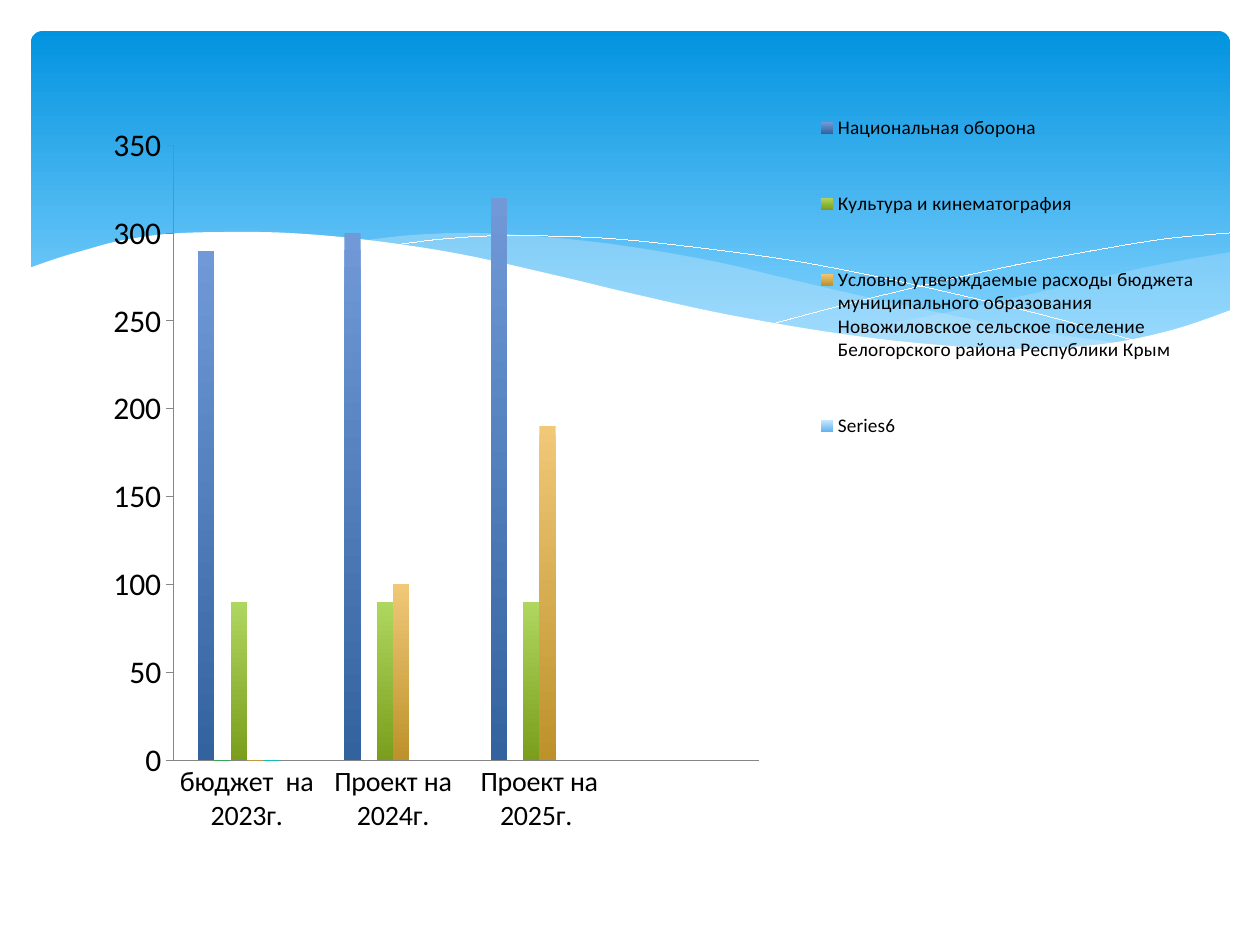
from lxml.etree import SubElement
from pptx import Presentation
from pptx.chart.data import CategoryChartData
from pptx.dml.color import RGBColor
from pptx.enum.chart import XL_CHART_TYPE, XL_LEGEND_POSITION, XL_TICK_MARK
from pptx.enum.shapes import MSO_SHAPE
from pptx.oxml import parse_xml
from pptx.oxml.ns import nsdecls, qn
from pptx.util import Pt

CATEGORIES = ["бюджет  на 2023г.", "Проект на 2024г.", "Проект на 2025г. ", ""]
# name, values, top colour, bottom colour, shown in legend
SERIES = [
    ("Национальная оборона", (290, 300, 320, None), "7199D8", "33639F", True),
    ("Series 2", (0, None, None, None), "7FDB94", "2FA04C", False),
    ("Культура и кинематография", (90, 90, 90, None), "AFD65F", "7A9E1C", True),
    ("Условно утверждаемые расходы бюджета муниципального образования "
     "Новожиловское сельское поселение Белогорского района Республики Крым",
     (0, 100, 190, None), "F0C878", "BD922B", True),
    ("Series 5", (0, None, None, None), "40E8E2", "05B5B0", False),
    ("Series6", (None, None, None, None), "C5E6FC", "5FB3F0", True),
]

THEME = {
    "font": "Calibri", "text": "000000", "axis": "868686",
    "sky": ("0293E0", "83D3FE"), "wave": "C6E7FC", "white": "FFFFFF",
    "value_size": 18, "category_size": 16, "legend_size": 11,
}

PX = 914400 / 126
SLIDE = (1260, 945)
BANNER = (31, 31, 1199, 340)
CHART = (75, 56, 1134, 804)
PLOT_LAYOUT = (0.087, 0.111, 0.516, 0.765)
LEGEND_LAYOUT = (0.65, 0.01, 0.345, 0.53)

# Each wave is a list of smooth edges, joined one after the other
RIGHT_WAVE = [
    [(1230, 252), (1142, 268), (1048, 290), (949, 312), (833, 334)],
    [(833, 334), (904, 343), (984, 349), (1051, 349), (1109, 344),
     (1160, 334), (1197, 324), (1230, 311)],
]
MIDDLE_WAVE = [
    [(1125, 344), (1017, 328), (889, 302), (793, 280), (717, 262),
     (632, 247), (557, 238), (479, 233), (413, 235), (360, 241)],
    [(360, 241), (431, 251), (509, 266), (566, 280), (668, 302), (757, 321),
     (838, 335), (910, 344), (989, 350), (1056, 350), (1125, 344)],
]
FALLING_LINE = [
    [(389, 246), (433, 240), (488, 236), (545, 236), (616, 239),
     (701, 248), (801, 262), (916, 285), (1047, 316), (1143, 343)],
]
RISING_LINE = [
    [(772, 324), (847, 304), (942, 281), (1016, 265), (1091, 251),
     (1164, 239), (1229, 233)],
]
WHITE_WAVE = [
    [(1231, 310), (1172, 330), (1103, 344), (1019, 349), (939, 345),
     (842, 334), (730, 315), (634, 294), (563, 277), (460, 254), (368, 240),
     (290, 233), (223, 232), (166, 234), (119, 241), (85, 250), (58, 258),
     (29, 268)],
    [(29, 415), (1231, 415)],
]


def emu(*lengths):
    return [round(length * PX) for length in lengths]


def color(name):
    return RGBColor.from_string(THEME.get(name, name))


def smooth(knots, steps=6):
    """Points of a Catmull-Rom curve through the knots."""
    if len(knots) < 3:
        return knots
    padded = [knots[0], *knots, knots[-1]]
    points = [knots[0]]
    for a, b, c, d in zip(padded, padded[1:], padded[2:], padded[3:]):
        for step in range(1, steps + 1):
            t = step / steps
            points.append(tuple(
                (2 * q + (r - p) * t + (2 * p - 5 * q + 4 * r - s) * t ** 2
                 + (3 * q - p - 3 * r + s) * t ** 3) / 2
                for p, q, r, s in zip(a, b, c, d)))
    return points


def fill_gradient(fill, top, bottom, end=1.0):
    fill.gradient()
    fill.gradient_angle = 270
    for stop, rgb, position in zip(fill.gradient_stops, (top, bottom), (0, end)):
        stop.color.rgb = color(rgb)
        stop.position = position


def draw_hairline(line, name):
    """Thinnest line: the zero width must be written out to take effect."""
    line.color.rgb = color(name)
    line._get_or_add_ln().set("w", "0")


def add_wave(slide, edges, fill=None, opacity=100):
    """Filled wave, or an open white hairline when no fill is given."""
    start, *rest = [emu(*point) for edge in edges for point in smooth(edge)]
    builder = slide.shapes.build_freeform(*start, scale=1.0)
    builder.add_line_segments(rest, close=fill is not None)
    shape = builder.convert_to_shape()
    shape.shadow.inherit = False
    if fill is None:
        shape.fill.background()
        draw_hairline(shape.line, "white")
        return
    shape.line.fill.background()
    shape.fill.solid()
    shape.fill.fore_color.rgb = color(fill)
    if opacity < 100:
        rgb = shape.fill._xPr.find(qn("a:solidFill"))[0]
        SubElement(rgb, qn("a:alpha"), val=str(opacity * 1000))


def add_banner(slide):
    banner = slide.shapes.add_shape(MSO_SHAPE.ROUNDED_RECTANGLE, *emu(*BANNER))
    banner.adjustments[0] = 0.034
    banner.shadow.inherit = False
    banner.line.fill.background()
    fill_gradient(banner.fill, *THEME["sky"], end=0.9)
    add_wave(slide, RIGHT_WAVE, "wave", 29)
    add_wave(slide, MIDDLE_WAVE, "wave", 40)
    add_wave(slide, FALLING_LINE)
    add_wave(slide, RISING_LINE)
    add_wave(slide, WHITE_WAVE, "white")


def manual_layout(box, inner=False):
    target = '<c:layoutTarget val="inner"/>' if inner else ""
    modes = "".join(f'<c:{axis}Mode val="edge"/>' for axis in "xy")
    sizes = "".join(f'<c:{key} val="{value}"/>' for key, value in zip("xywh", box))
    return parse_xml(f'<c:layout {nsdecls("c")}><c:manualLayout>{target}{modes}'
                     f'{sizes}</c:manualLayout></c:layout>')


def replace_layout(parent, layout, position):
    for old in parent.findall(qn("c:layout")):
        parent.remove(old)
    parent.insert(position, layout)


def style_font(font, size):
    font.name = THEME["font"]
    font.size = Pt(size)
    font.color.rgb = color("text")


def add_legend(chart):
    chart.has_legend = True
    legend = chart.legend
    legend.position = XL_LEGEND_POSITION.RIGHT
    legend.include_in_layout = False
    style_font(legend.font, THEME["legend_size"])
    hidden = [index for index, row in enumerate(SERIES) if not row[-1]]
    replace_layout(legend._element, manual_layout(LEGEND_LAYOUT), 1)
    for position, index in enumerate(hidden, 1):
        legend._element.insert(position, parse_xml(
            f'<c:legendEntry {nsdecls("c")}><c:idx val="{index}"/>'
            '<c:delete val="1"/></c:legendEntry>'))


def add_budget_chart(slide):
    data = CategoryChartData()
    data.categories = CATEGORIES
    for name, values, *_ in SERIES:
        data.add_series(name, values)
    chart = slide.shapes.add_chart(
        XL_CHART_TYPE.COLUMN_CLUSTERED, *emu(*CHART), data).chart
    chart.has_title = False
    style_font(chart.font, THEME["value_size"])
    plot = chart.plots[0]
    plot.gap_width, plot.overlap, plot.vary_by_categories = 300, 0, False
    for series, (_, _, top, bottom, _) in zip(plot.series, SERIES):
        series.invert_if_negative = False
        fill_gradient(series.format.fill, top, bottom)
    axes = ((chart.category_axis, XL_TICK_MARK.NONE, "category_size"),
            (chart.value_axis, XL_TICK_MARK.OUTSIDE, "value_size"))
    for axis, tick, size in axes:
        axis.has_major_gridlines = False
        axis.major_tick_mark = tick
        axis.minor_tick_mark = XL_TICK_MARK.NONE
        draw_hairline(axis.format.line, "axis")
        style_font(axis.tick_labels.font, THEME[size])
    chart.value_axis.minimum_scale = 0
    chart.value_axis.maximum_scale = 350
    chart.value_axis.major_unit = 50
    plot_area = chart._chartSpace.chart.plotArea
    replace_layout(plot_area, manual_layout(PLOT_LAYOUT, inner=True), 0)
    add_legend(chart)


def main():
    presentation = Presentation()
    presentation.slide_width, presentation.slide_height = emu(*SLIDE)
    slide = presentation.slides.add_slide(presentation.slide_layouts[6])
    add_banner(slide)
    add_budget_chart(slide)
    presentation.save("out.pptx")


if __name__ == "__main__":
    main()
